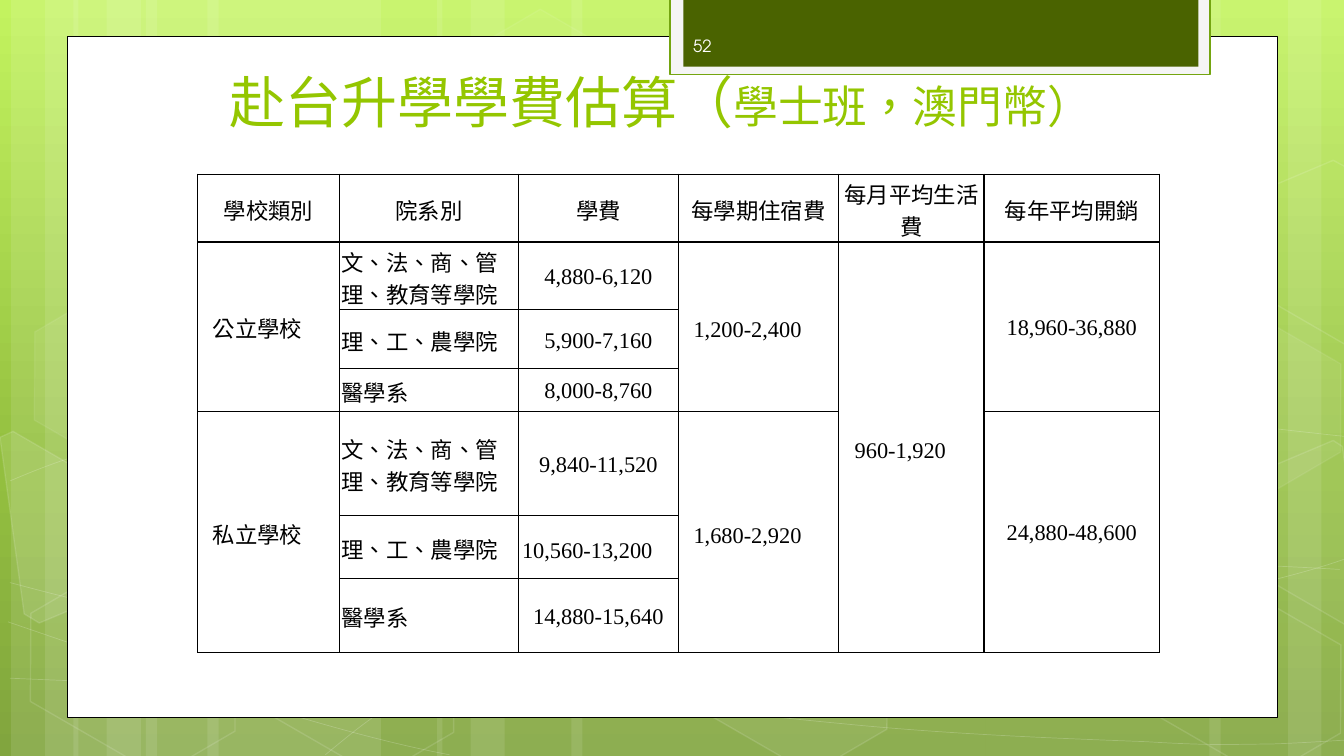
import copy

import lxml.etree
import pptx
import pptx.dml.color
import pptx.enum.shapes
import pptx.enum.text
import pptx.oxml.ns
import pptx.util

Cm = pptx.util.Cm
Pt = pptx.util.Pt
qn = pptx.oxml.ns.qn
RGBColor = pptx.dml.color.RGBColor
SHAPES = pptx.enum.shapes.MSO_SHAPE
ANCHOR = pptx.enum.text.MSO_ANCHOR
ALIGN = pptx.enum.text.PP_ALIGN

WHITE = RGBColor(0xFF, 0xFF, 0xFF)
BLACK = RGBColor(0x00, 0x00, 0x00)
PALE = RGBColor(0xF5, 0xF5, 0xF5)
LEAF = RGBColor(0x74, 0xA5, 0x10)
OLIVE = RGBColor(0x4A, 0x63, 0x00)
LIME = RGBColor(0x94, 0xC6, 0x00)
NUMBER_WHITE = RGBColor(0xFE, 0xFE, 0xFE)
SKY = [(0, RGBColor(0xC3, 0xF3, 0x5F)), (0.62, RGBColor(0x93, 0xBF, 0x3F)),
       (1, RGBColor(0x81, 0xA5, 0x3E))]
CJK_FONT = "Noto Sans CJK SC"


def paint(shape, fill=None, fill_alpha=100, line=None, width=1, line_alpha=100):
    shape.shadow.inherit = False
    properties = shape.element.spPr
    shape.fill.background()
    shape.line.fill.background()
    if fill is not None and fill_alpha:
        shape.fill.solid()
        shape.fill.fore_color.rgb = fill
        if fill_alpha < 100:
            lxml.etree.SubElement(properties.find(qn("a:solidFill"))[0], qn("a:alpha"),
                                  val=str(fill_alpha * 1000))
    if line is not None:
        shape.line.width = Pt(width)
        shape.line.color.rgb = line
        if line_alpha < 100:
            lxml.etree.SubElement(properties.find(qn("a:ln")).find(qn("a:solidFill"))[0],
                                  qn("a:alpha"), val=str(line_alpha * 1000))


def outline(points, close):
    corners = [(Cm(x), Cm(y)) for x, y in points]
    builder = slide.shapes.build_freeform(*corners[0])
    builder.add_line_segments(corners[1:], close=close)
    return builder.convert_to_shape()


deck = pptx.Presentation()
deck.slide_width = Cm(33.87)
deck.slide_height = Cm(19.05)
slide = deck.slides.add_slide(deck.slide_layouts[5])

sky = slide.background.fill
sky.gradient()
sky.gradient_angle = 270
stop_list = next(slide.element.iter(qn("a:gsLst")))
stop_list.insert(1, copy.deepcopy(stop_list[0]))
for stop, (position, color) in zip(sky.gradient_stops, SKY):
    stop.position = position
    stop.color.rgb = color

for left, width in [(3.68, 5.92), (0.28, 1.7), (1.14, 2.82), (5.23, 5.92), (1.85, 1.7),
                    (2.69, 2.82), (24.84, 5.92), (32.46, 1.7), (30.48, 2.82),
                    (14.4, 10.44), (11.02, 1.7), (11.86, 2.82)]:
    band = slide.shapes.add_shape(SHAPES.RECTANGLE, Cm(left), 0, Cm(width), deck.slide_height)
    paint(band, WHITE, 10)

waves = [
    [(0.25, 17.09), (2.08, 17.17), (3.91, 17.25), (6.45, 17.22), (8.99, 17.2), (12.12, 17.15),
     (15.49, 16.89), (18.9, 16.64), (23.7, 16.15), (26.8, 15.67), (29.92, 15.19),
     (33.1, 14.43), (34.11, 14)],
    [(0.25, 12.12), (1.22, 11.71), (2.18, 11.33), (4.11, 10.95), (6.05, 10.57), (8.76, 10.01),
     (11.76, 9.83), (14.78, 9.65), (18.42, 9.63), (22.15, 9.83), (25.88, 10.03),
     (32.08, 10.82), (34.11, 11.02)],
    [(0.2, 15.67), (4.29, 17.07), (8.38, 18.47), (11.33, 19.02)],
    [(0.25, 14.68), (1.3, 14.96), (2.36, 15.24), (4.34, 15.65), (6.3, 16.03), (9.25, 16.66),
     (12.07, 17.09), (14.88, 17.53), (18.47, 17.98), (21.26, 18.24), (24.08, 18.52),
     (27.08, 18.62), (28.88, 18.69), (30.66, 18.8), (31.12, 18.75), (32, 18.75),
     (32.87, 18.72), (33.5, 18.67), (34.11, 18.64)],
    [(8.2, 19.02), (8.81, 18.52), (9.4, 18.01), (10.24, 17.55), (11.05, 17.09), (12.19, 16.59),
     (13.13, 16.23), (14.07, 15.88), (14.66, 15.72), (15.9, 15.47), (17.15, 15.22),
     (19.43, 14.86), (20.6, 14.68), (21.79, 14.5), (21.97, 14.5), (23.04, 14.45),
     (24.08, 14.38), (25.73, 14.3), (26.9, 14.27), (28.07, 14.25), (30.02, 14.27),
     (30.02, 14.27), (30.77, 14.27), (31.51, 14.27), (32.26, 14.27), (32.89, 14.3),
     (33.45, 14.33), (33.76, 14.35)],
]
for points in waves:
    wave = outline(points, False)
    paint(wave, line=WHITE, width=0.5, line_alpha=20)
    segments = list(wave.element.iter(qn("a:lnTo")))
    for first, second, third in zip(segments[::3], segments[1::3], segments[2::3]):
        curve = lxml.etree.Element(qn("a:cubicBezTo"))
        first.addprevious(curve)
        for segment in (first, second, third):
            curve.append(segment[0])
            segment.getparent().remove(segment)

for left, top, fill_alpha, line_alpha in [
        (11.3, 0.91, 4, 8), (16.81, 14.96, 6, 12), (0.38, 15.01, 0, 12), (0.48, 7.92, 7, 8),
        (5.89, 15.04, 0, 12), (28.24, 15.06, 0, 12), (28.24, 7.98, 7, 8)]:
    hexagon = slide.shapes.add_shape(SHAPES.HEXAGON, Cm(left), Cm(top), Cm(5.94), Cm(3.86))
    hexagon.adjustments[0] = 0.285
    hexagon.rotation = 30
    paint(hexagon, WHITE, fill_alpha, WHITE, 1, line_alpha)

for fill_alpha, points in [
        (10, [(0, 11.02), (0.33, 10.87), (2.92, 12.37), (3.23, 14.76), (0.99, 15.7), (0.61, 15.47)]),
        (4, [(31.37, 12.04), (33.6, 11.1), (33.83, 11.25), (34.47, 15.88), (34.26, 15.95),
             (31.67, 14.45)]),
        (0, [(31.37, 4.98), (33.6, 4.04), (33.88, 4.19), (34.47, 8.79), (34.26, 8.89),
             (31.67, 7.39)])]:
    paint(outline(points, True), WHITE, fill_alpha, WHITE, 1, 12)

for left, top, width, height, fill, line, line_width in [
        (1.7, 0.91, 30.48, 17.17, WHITE, BLACK, 0.5),
        (16.89, -0.05, 13.61, 1.93, PALE, LEAF, 1.25),
        (17.22, -0.05, 12.98, 1.73, OLIVE, None, 0)]:
    panel = slide.shapes.add_shape(SHAPES.RECTANGLE, Cm(left), Cm(top), Cm(width), Cm(height))
    paint(panel, fill, line=line, width=line_width)

title = slide.shapes.title
slide.shapes.element.append(title.element)
title.left, title.top, title.width, title.height = Cm(5.54), Cm(0.76), Cm(22.83), Cm(2.77)
title.text_frame.auto_size = pptx.enum.text.MSO_AUTO_SIZE.NONE
title.text_frame.vertical_anchor = ANCHOR.BOTTOM
heading = title.text_frame.paragraphs[0]
heading.alignment = ALIGN.LEFT
for text, size in [("赴台升學學費估算（", 40), ("學士班，澳門幣）", 32)]:
    run = heading.add_run()
    run.text = text
    run.font.size = Pt(size)
    run.font.name = CJK_FONT
    run.font.color.rgb = LIME

fees = [
    ["學校類別", "院系別", "學費", "每學期住宿費", "每月平均生活費", "每年平均開銷"],
    ["公立學校　", "文、法、商、管理、教育等學院", "4,880-6,120", "1,200-2,400　", "960-1,920　",
     "18,960-36,880"],
    ["", "理、工、農學院", "5,900-7,160", "", "", ""],
    ["", "醫學系", "8,000-8,760", "", "", ""],
    ["私立學校　", "文、法、商、管理、教育等學院", "9,840-11,520", "1,680-2,920　", "",
     "24,880-48,600"],
    ["", "理、工、農學院", "10,560-13,200　", "", "", ""],
    ["", "醫學系", "14,880-15,640", "", "", ""],
]
fee_frame = slide.shapes.add_table(7, 6, Cm(4.98), Cm(4.39), Cm(24.23), Cm(11.76))
fee_table = fee_frame.table
fee_table.first_row = False
fee_table.horz_banding = False
for column, width in zip(fee_table.columns, [3.58, 4.5, 4.04, 4.04, 3.66, 4.42]):
    column.width = Cm(width)
for row, height in zip(fee_table.rows, [1.55, 1.6, 1.47, 1.09, 2.62, 1.6, 1.85]):
    row.height = Cm(height)
for top, bottom, column in [(1, 3, 0), (4, 6, 0), (1, 3, 3), (4, 6, 3), (1, 6, 4),
                            (1, 3, 5), (4, 6, 5)]:
    fee_table.cell(top, column).merge(fee_table.cell(bottom, column))

for index, (cell, tc) in enumerate(zip(fee_table.iter_cells(), fee_frame.element.iter(qn("a:tc")))):
    row, column = divmod(index, 6)
    cell.fill.background()
    cell.vertical_anchor = ANCHOR.MIDDLE
    cell.margin_left = cell.margin_right = Cm(0.05)
    cell.margin_top, cell.margin_bottom = Cm(0.08), 0
    if fees[row][column]:
        cell.text_frame.text = fees[row][column]
        entry = cell.text_frame.paragraphs[0]
        entry.alignment = ALIGN.LEFT if column == 1 and row else ALIGN.CENTER
        entry.runs[0].font.size = Pt(16)
        entry.runs[0].font.name = "Times New Roman"
        entry.runs[0].font.color.rgb = BLACK
    thin_top = column in (1, 2) and row in (2, 3, 5, 6)
    thin_bottom = column in (1, 2) and row in (1, 2, 4, 5)
    borders = [("L", 1), ("R", 1), ("T", 0.5 if thin_top else 1), ("B", 0.5 if thin_bottom else 1)]
    for place, (side, weight) in enumerate(borders):
        border = lxml.etree.Element(qn("a:ln" + side), w=str(Pt(weight)))
        ink = lxml.etree.SubElement(border, qn("a:solidFill"))
        lxml.etree.SubElement(ink, qn("a:srgbClr"), val=str(BLACK))
        tc.get_or_add_tcPr().insert(place, border)

page_number = slide.shapes.add_textbox(Cm(17.22), Cm(0.64), Cm(4.93), Cm(1.02))
page_number.text_frame.word_wrap = True
page_number.text_frame.vertical_anchor = ANCHOR.MIDDLE
page_number.text_frame.text = "52"
digits = page_number.text_frame.paragraphs[0].runs[0]
digits.font.size = Pt(12)
digits.font.name = "TeX Gyre Adventor"
digits.font.color.rgb = NUMBER_WHITE

for run_properties in slide.element.iter(qn("a:rPr")):
    run_properties.set("lang", "zh-TW")
    lxml.etree.SubElement(run_properties, qn("a:ea"), typeface=CJK_FONT)

deck.save("out.pptx")
